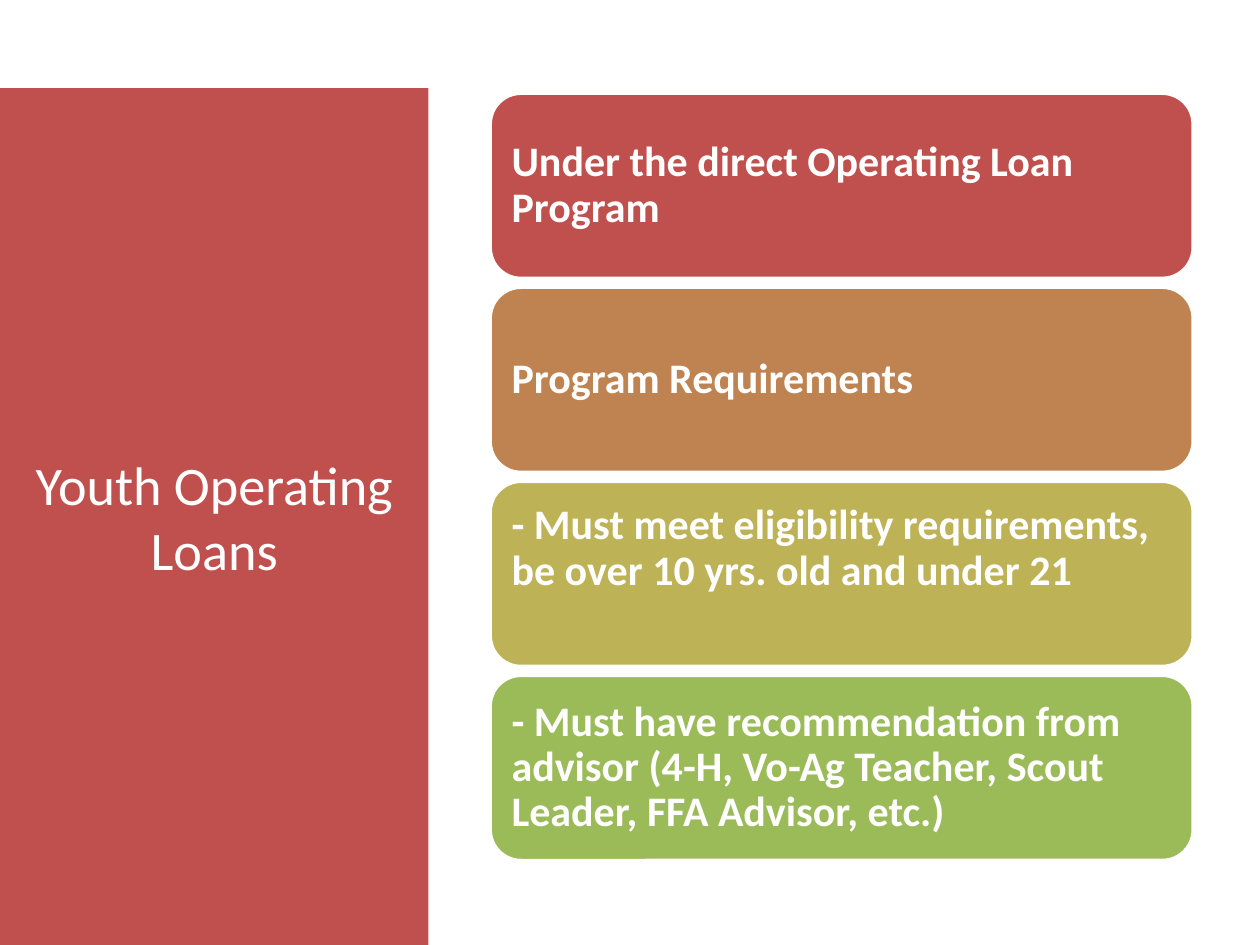
import pptx
import pptx.util
import pptx.dml.color
import pptx.enum.shapes
import pptx.enum.text

Inches, Pt = pptx.util.Inches, pptx.util.Pt
MID = pptx.enum.text.MSO_ANCHOR.MIDDLE
ALIGN = pptx.enum.text.PP_ALIGN

COLORS = {"red": "C0504D", "orange": "BE8351", "olive": "BDB255",
          "green": "9BBB59", "white": "FFFFFF"}

# Card column: left edge, first top, size and distance between tops
LEFT, TOP, WIDE, HIGH, STEP = 3.89, 0.74, 5.58, 1.47, 1.54
INSET = 0.1

# Fill, text and extra room below the text
CARDS = [
    ("red", "Under the direct Operating Loan Program", 0),
    ("orange", "Program Requirements", 0),
    ("olive", "- Must meet eligibility requirements, \v"
              "be over 10 yrs. old and under 21", 0.4),
    ("green", "- Must have recommendation from advisor (4-H, Vo-Ag Teacher, "
              "Scout Leader, FFA Advisor, etc.)", 0),
]


def color(name):
    return pptx.dml.color.RGBColor.from_string(COLORS[name])


def paint(shape, name):
    shape.fill.solid()
    shape.fill.fore_color.rgb = color(name)


def write(shape, text, size, align, bold=False):
    """Put one white paragraph, centred vertically, into the shape."""
    frame = shape.text_frame
    frame.word_wrap = True
    frame.auto_size = pptx.enum.text.MSO_AUTO_SIZE.NONE
    frame.vertical_anchor = MID
    para = frame.paragraphs[0]
    para.text = text
    para.alignment = align
    font = para.font
    font.name, font.size, font.bold = "Calibri", Pt(size), bold
    font.color.rgb = color("white")
    return frame


def add_panel(slide, text):
    """Make the title a coloured panel on the left."""
    title = slide.shapes.title
    title.left, title.top = Inches(0), Inches(0.7)
    title.width, title.height = Inches(3.4), Inches(6.8)
    paint(title, "red")
    write(title, text, 31, ALIGN.CENTER)


def add_card(slide, row, fill, text, room):
    card = slide.shapes.add_shape(
        pptx.enum.shapes.MSO_SHAPE.ROUNDED_RECTANGLE,
        Inches(LEFT), Inches(TOP + row * STEP), Inches(WIDE), Inches(HIGH))
    card.shadow.inherit = False
    paint(card, fill)
    card.line.color.rgb = color("white")
    card.line.width = Pt(2)
    frame = write(card, text, 24, ALIGN.LEFT, bold=True)
    frame.paragraphs[0].line_spacing = 0.9
    frame.margin_left = frame.margin_right = frame.margin_top = Inches(INSET)
    frame.margin_bottom = Inches(INSET + room)


def main():
    deck = pptx.Presentation()
    deck.slide_width, deck.slide_height = Inches(10), Inches(7.5)
    slide = deck.slides.add_slide(deck.slide_layouts[5])
    add_panel(slide, "Youth Operating Loans")
    for row, card in enumerate(CARDS):
        add_card(slide, row, *card)
    deck.save("out.pptx")


if __name__ == "__main__":
    main()
